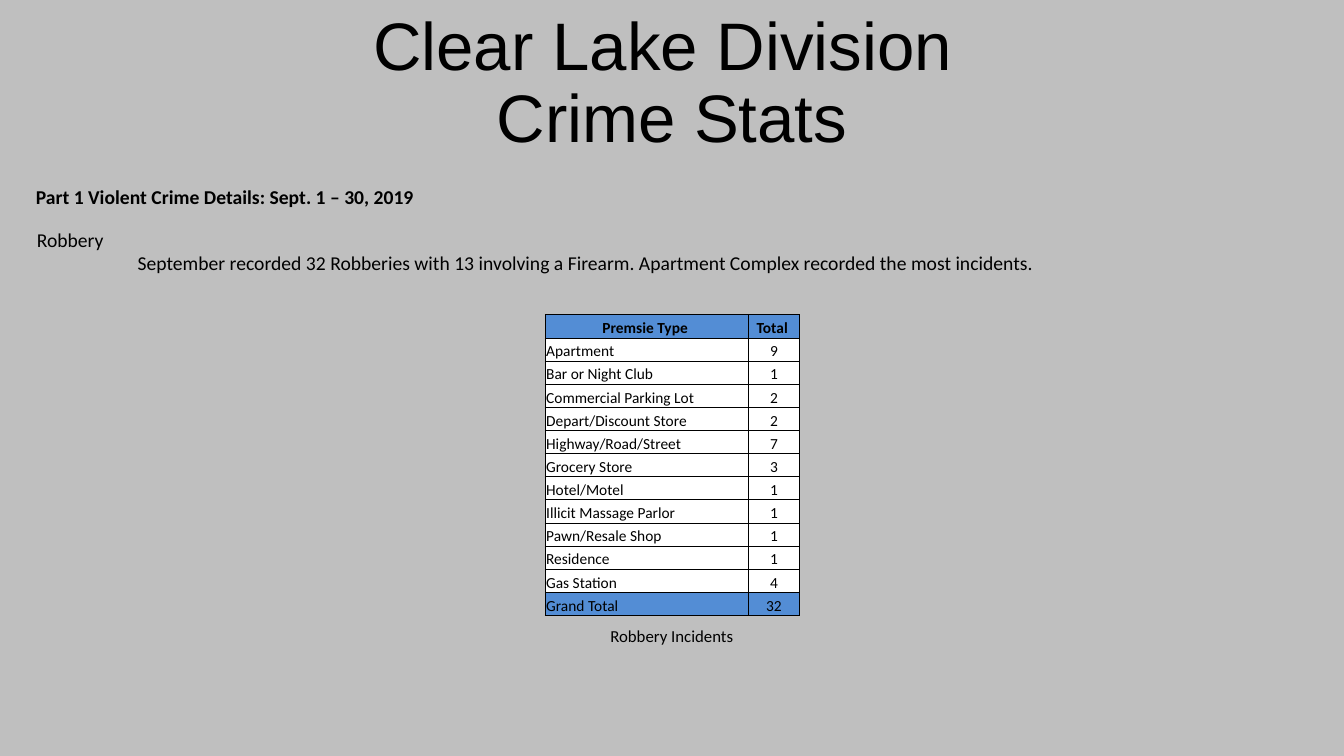
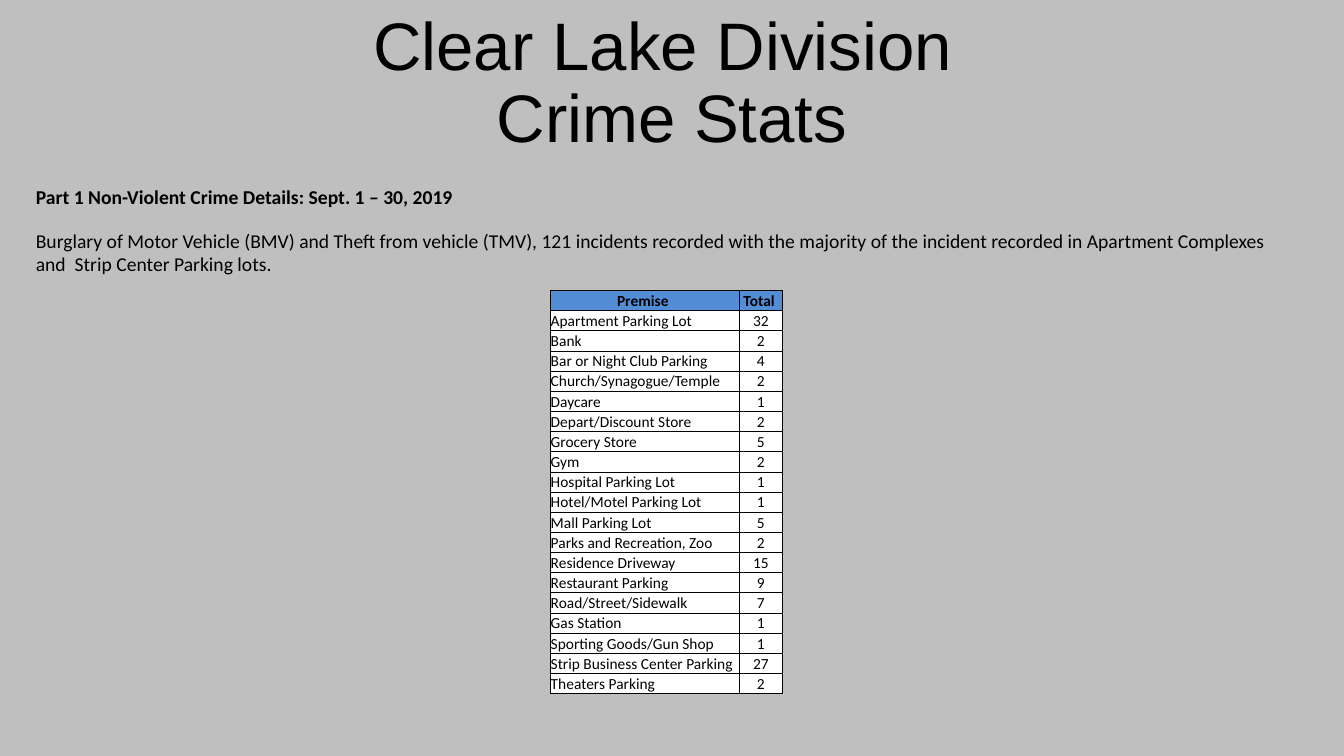
from lxml.etree import SubElement
from pptx import Presentation
from pptx.dml.color import RGBColor
from pptx.enum.text import MSO_ANCHOR, MSO_AUTO_SIZE, PP_ALIGN
from pptx.oxml.ns import qn
from pptx.util import Pt

# Shared look
WIDTH, HEIGHT = 960, 540
GREY, BLUE, WHITE, BLACK = "BFBFBF", "538DD5", "FFFFFF", "000000"
LEFT, CENTER = PP_ALIGN.LEFT, PP_ALIGN.CENTER

ROBBERIES = [
    ("Apartment", 9), ("Bar or Night Club", 1), ("Commercial Parking Lot", 2),
    ("Depart/Discount Store", 2), ("Highway/Road/Street", 7),
    ("Grocery Store", 3), ("Hotel/Motel", 1), ("Illicit Massage Parlor", 1),
    ("Pawn/Resale Shop", 1), ("Residence", 1), ("Gas Station", 4),
    ("Grand Total", 32),
]
VEHICLE_THEFTS = [
    ("Apartment Parking Lot", 32), ("Bank", 2),
    ("Bar or Night Club Parking", 4), ("Church/Synagogue/Temple", 2),
    ("Daycare", 1), ("Depart/Discount Store", 2), ("Grocery Store", 5),
    ("Gym", 2), ("Hospital Parking Lot", 1), ("Hotel/Motel Parking Lot", 1),
    ("Mall Parking Lot", 5), ("Parks and Recreation, Zoo", 2),
    ("Residence Driveway", 15), ("Restaurant Parking", 9),
    ("Road/Street/Sidewalk", 7), ("Gas Station", 1),
    ("Sporting Goods/Gun Shop", 1), ("Strip Business Center Parking", 27),
    ("Theaters Parking", 2),
]


def rgb(color):
    return RGBColor.from_string(color)


def write(p, text, size=14, font="Calibri", color=BLACK, bold=False,
          align=LEFT, indent=0):
    """Fill one paragraph; a vertical tab in the text is a line break."""
    p.text = text
    p.alignment = align
    if indent:
        p._p.get_or_add_pPr().set("marL", str(Pt(indent)))
    for r in p.runs:
        r.font.size, r.font.name, r.font.bold = Pt(size), font, bold
        r.font.color.rgb = rgb(color)


def add_text(s, box, text, wrap=True, **fmt):
    sp = s.shapes.add_textbox(*map(Pt, box))
    tf = sp.text_frame
    tf.word_wrap = wrap
    tf.auto_size = MSO_AUTO_SIZE.SHAPE_TO_FIT_TEXT
    write(tf.paragraphs[0], text, **fmt)
    return tf


def add_crime_slide(prs, heading, heading_width):
    """Add a slide with the shared title and a bold section heading."""
    s = prs.slides.add_slide(prs.slide_layouts[5])
    title = s.shapes.title
    title.left, title.top = Pt(0), Pt(0)
    title.width, title.height = Pt(WIDTH), Pt(116)
    tf = title.text_frame
    tf.vertical_anchor = MSO_ANCHOR.BOTTOM
    tf.auto_size = MSO_AUTO_SIZE.NONE
    p = tf.paragraphs[0]
    write(p, "Clear Lake Division \vCrime Stats", size=48, font="Arial",
          align=CENTER)
    p.line_spacing = 0.9
    add_text(s, (18.5, 128.2, heading_width, 24.2), heading, bold=True)
    return s


def add_borders(cell):
    tcPr = cell._tc.get_or_add_tcPr()
    for side in ("a:lnL", "a:lnR", "a:lnT", "a:lnB"):
        ln = SubElement(tcPr, qn(side), w=str(Pt(0.5)))
        fill = SubElement(ln, qn("a:solidFill"))
        SubElement(fill, qn("a:srgbClr"), val=BLACK)


def style_cell(cell, text, fill, **fmt):
    add_borders(cell)
    cell.fill.solid()
    cell.fill.fore_color.rgb = rgb(fill)
    cell.vertical_anchor = MSO_ANCHOR.BOTTOM
    cell.margin_left = cell.margin_right = cell.margin_top = Pt(0.6)
    cell.margin_bottom = Pt(0)
    write(cell.text_frame.paragraphs[0], text, size=11, **fmt)


def add_premise_table(s, left, top, col_widths, row_height, header, rows):
    rows = [(header, "Total "), *rows]
    frame = s.shapes.add_table(len(rows), 2, Pt(left), Pt(top),
                               Pt(sum(col_widths)), Pt(row_height * len(rows)))
    table = frame.table
    table.horz_banding = False
    for col, width in zip(table.columns, col_widths):
        col.width = Pt(width)
    for i, values in enumerate(rows):
        table.rows[i].height = Pt(row_height)
        fill = BLUE if i == 0 or values[0] == "Grand Total" else WHITE
        for j, value in enumerate(values):
            style_cell(table.cell(i, j), str(value), fill, bold=i == 0,
                       align=LEFT if i and j == 0 else CENTER)


def main():
    prs = Presentation()
    prs.slide_width, prs.slide_height = Pt(WIDTH), Pt(HEIGHT)
    background = prs.slide_master.background.fill
    background.solid()
    background.fore_color.rgb = rgb(GREY)

    # Violent crime: robberies
    s = add_crime_slide(
        prs, "Part 1 Violent Crime Details: Sept. 1 – 30, 2019", 286)
    tf = add_text(s, (19.2, 159, 940.8, 41.2), "Robbery")
    write(tf.add_paragraph(),
          "September recorded 32 Robberies with 13 involving a Firearm. "
          "Apartment Complex recorded the most incidents.", indent=72)
    add_text(s, (428.4, 443.5, 103, 21.8), "Robbery Incidents", wrap=False,
             size=12, align=CENTER)
    add_premise_table(s, 389.5, 224.8, (145.2, 36.3), 16.55, "Premsie Type ",
                      ROBBERIES)

    # Non-violent crime: thefts from vehicles
    s = add_crime_slide(
        prs, "Part 1 Non-Violent Crime Details: Sept. 1 – 30, 2019", 317)
    add_text(s, (18.5, 159.8, 914, 41.2),
             "Burglary of Motor Vehicle (BMV) and Theft from vehicle (TMV), "
             "121 incidents recorded with the majority of the incident "
             "recorded in Apartment Complexes and  Strip Center Parking lots.")
    add_premise_table(s, 392.8, 207.4, (135.3, 30.8), 14.4, "Premise ",
                      VEHICLE_THEFTS)

    prs.save("out.pptx")


if __name__ == "__main__":
    main()
